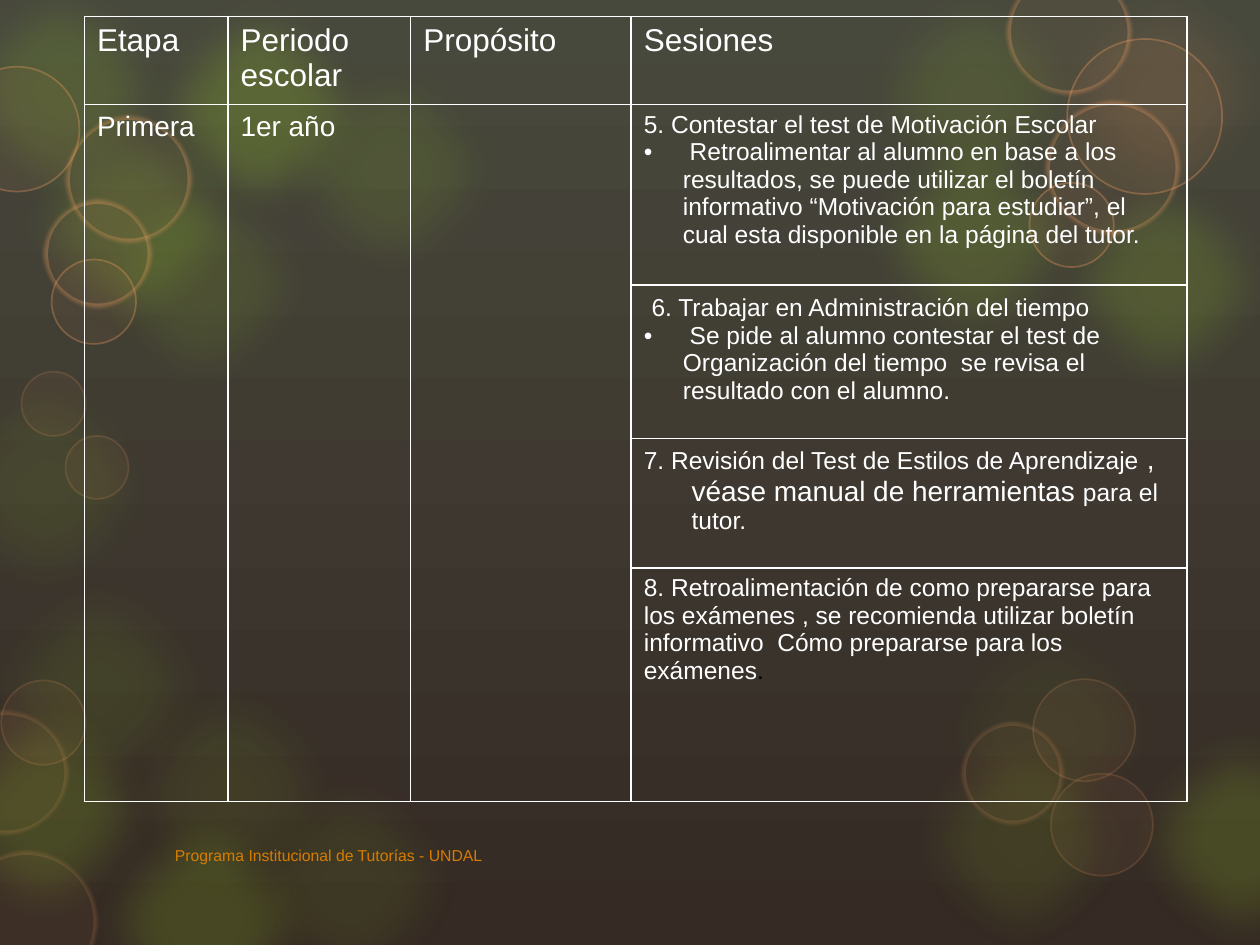
from lxml import etree
from pptx import Presentation
from pptx.dml.color import RGBColor
from pptx.enum.shapes import MSO_SHAPE
from pptx.enum.text import MSO_ANCHOR
from pptx.oxml.ns import qn
from pptx.util import Inches, Pt

OVAL = MSO_SHAPE.OVAL
BOTTOM = MSO_ANCHOR.BOTTOM
COLORS = {
    "top": "48493D", "base": "352A24", "green": "AAEA25", "peach": "FFA466",
    "white": "FFFFFF", "black": "000000", "foot": "D77C01",
}
GLOWS = [
    (-0.26, 4.42, 8), (0.57, 1.2, 10), (2.05, 0.31, 10), (0.57, 6.27, 16),
    (-0.56, -0.32, 14), (1.01, -0.18, 20), (0, 0.72, 15), (6.69, -0.29, 10),
    (8.2, 1.2, 15), (8.81, 5.62, 16), (7.29, 4.77, 5), (-0.69, 5.41, 16),
    (0.77, 5.24, 8), (6.69, 0.86, 15), (7.06, 5.62, 10), (1.73, 5.96, 8),
    (-0.69, 2.82, 8),
]
RINGS = {
    (1, 15): [
        (0.01, 5.4, 0.67), (8.34, 6.14, 0.81), (8.2, 5.39, 0.81),
        (0.17, 2.95, 0.51), (0.52, 3.46, 0.5),
    ],
    (1, 30): [
        (-0.36, 0.53, 0.99), (0.41, 2.06, 0.67), (8.47, 0.31, 1.23),
        (8.17, 1.45, 0.67),
    ],
    (5, 15): [(-0.35, 6.75, 1.12), (-0.44, 5.64, 0.98), (7.63, 5.73, 0.81)],
    (5, 30): [
        (0.52, 0.92, 1), (0.35, 1.59, 0.85), (7.99, -0.24, 0.99),
        (8.3, 0.8, 1.06),
    ],
}
COLS = [1.14, 1.45, 1.75, 4.41]
ROWS = [0.66, 1.43, 1.22, 1.03, 1.85]
HEADS = ["Etapa", "Periodo escolar", "Propósito", "Sesiones"]
TASKS = [
    [
        {"runs": [("5. Contestar el test de Motivación Escolar", 14)], "hang": 0.38},
        {"runs": [(" Retroalimentar al alumno en base a los resultados, se puede "
                   "utilizar el boletín informativo “Motivación para estudiar”, el "
                   "cual esta disponible en la página del tutor.", 14)],
         "hang": 0.31, "mark": "•"},
    ],
    [
        {"runs": [(" ", 16), ("6. Trabajar en Administración del tiempo", 14)]},
        {"runs": [(" Se pide al alumno contestar el test de Organización del "
                   "tiempo  se revisa el resultado con el alumno.", 14)],
         "hang": 0.31, "mark": "•"},
    ],
    [
        {"runs": [("7. Revisión del Test de Estilos de Aprendizaje", 14),
                  (" , véase manual de herramientas ", 16),
                  ("para el tutor.", 14)], "hang": 0.38},
    ],
    [
        {"runs": [("8. Retroalimentación de como prepararse para los exámenes , se "
                   "recomienda utilizar boletín informativo  Cómo prepararse para "
                   "los exámenes", 14), (".", 14, "black")]},
    ],
]


def rgb(name):
    """Return the named colour."""
    return RGBColor.from_string(COLORS[name])


def node(root, tag, **attrs):
    """Append a child element with attributes."""
    return etree.SubElement(root, qn(tag), {k: str(v) for k, v in attrs.items()})


def tint(fill, name, alpha):
    """Fill with a translucent colour."""
    fill.solid()
    fill.fore_color.rgb = rgb(name)
    solid = fill._xPr.find(qn("a:solidFill"))
    node(solid[0], "a:alpha", val=alpha * 1000)


def write(para, runs, color="white", hang=0, mark=None):
    """Write runs of text, size and optional colour into a paragraph."""
    props = para._p.get_or_add_pPr()
    if hang:
        props.set("marL", str(Inches(hang)))
        props.set("indent", str(-Inches(hang)))
    if mark:
        node(props, "a:buFont", typeface="Arial")
        node(props, "a:buChar", char=mark)
    for text, size, *own in runs:
        run = para.add_run()
        run.text = text
        run.font.name = "Arial"
        run.font.size = Pt(size)
        run.font.bold = False
        run.font.color.rgb = rgb(own[0] if own else color)


def disc(slide, x, y, size, name, alpha, line=None, soft=0):
    """Draw a translucent disc with an optional ring and soft edge."""
    shape = slide.shapes.add_shape(
        OVAL, Inches(x), Inches(y), Inches(size), Inches(size))
    tint(shape.fill, name, alpha)
    if line:
        width, fade = line
        shape.line.width = Pt(width)
        tint(shape.line.fill, name, fade)
    else:
        shape.line.fill.background()
    shape.shadow.inherit = False
    if soft:
        glow = shape._element.spPr.find(qn("a:effectLst"))
        node(glow, "a:softEdge", rad=Pt(soft))


def lights(slide):
    """Paint the gradient and the blurred lights."""
    fill = slide.background.fill
    fill.gradient()
    fill.gradient_angle = 270
    for stop, name in zip(fill.gradient_stops, ("top", "base")):
        stop.color.rgb = rgb(name)
    for x, y, alpha in GLOWS:
        disc(slide, x, y, 2.09, "green", alpha, soft=25)
    disc(slide, 8.2, -0.32, 2.09, "peach", 10, soft=25)
    for line, group in RINGS.items():
        for spot in group:
            disc(slide, *spot, "peach", 5, line, 2.5 if line[0] > 1 else 0)


def frame(cell):
    """Clear a cell and give it white borders."""
    props = cell._tc.get_or_add_tcPr()
    for side in ("L", "R", "T", "B"):
        edge = node(props, f"a:ln{side}", w=Pt(1))
        node(node(edge, "a:solidFill"), "a:srgbClr", val=COLORS["white"])
    cell.fill.background()


def plan(slide, x, y):
    """Build the table of sessions."""
    table = slide.shapes.add_table(
        len(ROWS), len(COLS), Inches(x), Inches(y),
        Inches(sum(COLS)), Inches(sum(ROWS))).table
    table.first_row = table.horz_banding = False
    for col, width in zip(table.columns, COLS):
        col.width = Inches(width)
    for row, height in zip(table.rows, ROWS):
        row.height = Inches(height)
    for cell in table.iter_cells():
        frame(cell)
    for i, head in enumerate(HEADS):
        write(table.cell(0, i).text_frame.paragraphs[0], [(head, 18)])
    for i, text in enumerate(("Primera", "1er año", "")):
        cell = table.cell(1, i)
        cell.merge(table.cell(len(ROWS) - 1, i))
        if text:
            write(cell.text_frame.paragraphs[0], [(text, 16)])
    for i, task in enumerate(TASKS, 1):
        body = table.cell(i, 3).text_frame
        for j, part in enumerate(task):
            write(body.add_paragraph() if j else body.paragraphs[0], **part)


def footer(slide, x, y, width, height):
    """Place the footer line."""
    box = slide.shapes.add_textbox(
        Inches(x), Inches(y), Inches(width), Inches(height)).text_frame
    box.word_wrap = True
    box.vertical_anchor = BOTTOM
    write(box.paragraphs[0], [("Programa Institucional de Tutorías - UNDAL", 9)], "foot")


def main():
    """Build and save the slide."""
    deck = Presentation()
    deck.slide_width, deck.slide_height = Inches(10), Inches(7.5)
    slide = deck.slides.add_slide(deck.slide_layouts[6])
    lights(slide)
    footer(slide, 1.29, 6.51, 5.75, 0.4)
    plan(slide, 0.67, 0.13)
    deck.save("out.pptx")


if __name__ == "__main__":
    main()
